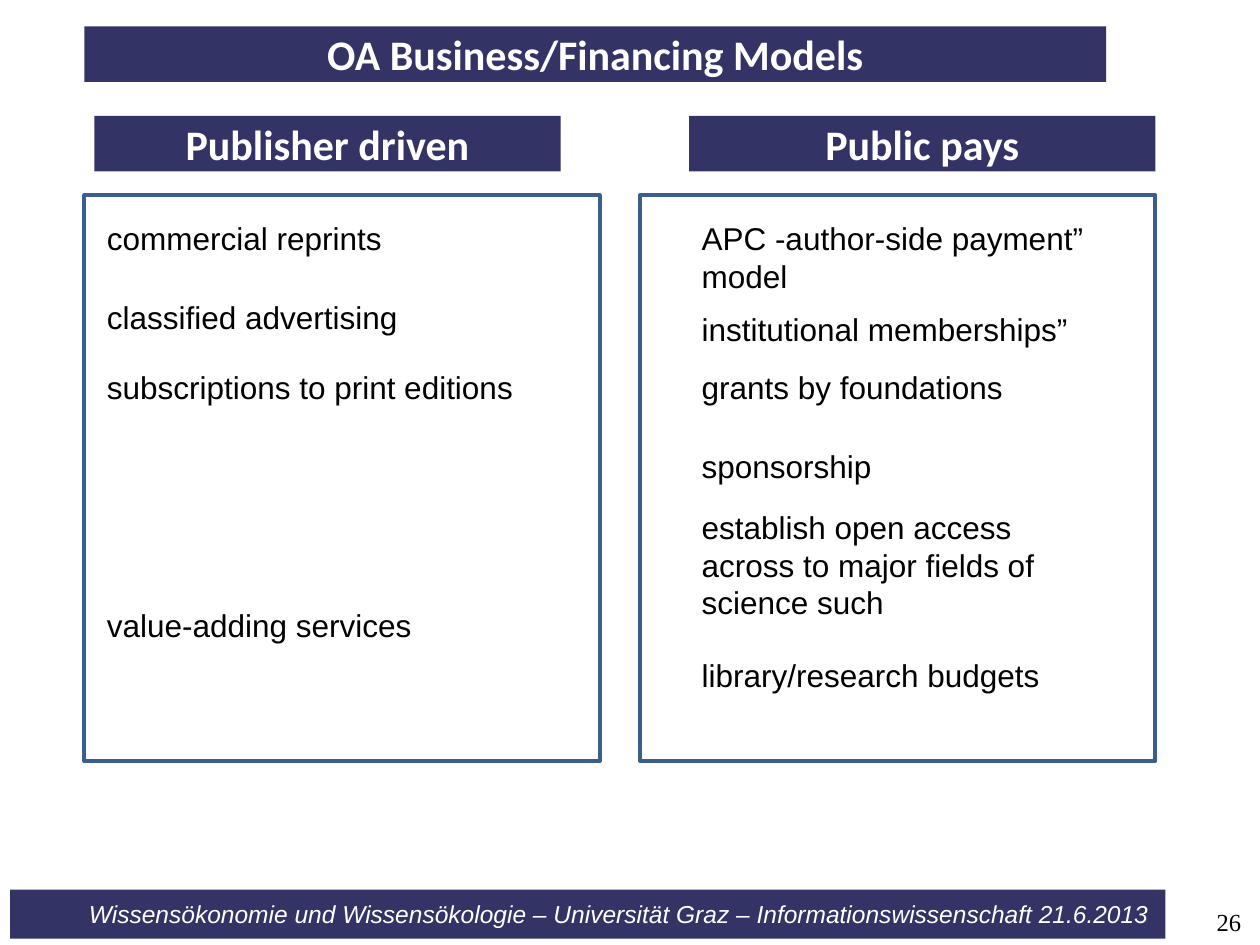
from dataclasses import dataclass

from pptx import Presentation
from pptx.dml.color import RGBColor
from pptx.enum.shapes import MSO_SHAPE as Shape
from pptx.enum.text import MSO_ANCHOR as Anchor, MSO_AUTO_SIZE as AutoSize, PP_ALIGN as Align
from pptx.util import Inches, Pt

NAVY = RGBColor(0x33, 0x33, 0x66)
BLUE = RGBColor(0x3A, 0x5F, 0x8C)
WHITE = RGBColor(0xFF, 0xFF, 0xFF)
BLACK = RGBColor(0, 0, 0)

HEADING = {"name": "Calibri", "size": Pt(24), "bold": True}
BODY = {"name": "Arial", "size": Pt(18)}
FOOTER = {"name": "Arial", "size": Pt(14), "italic": True}
NUMBER = {"name": "Times New Roman", "size": Pt(14)}

LINE_SHARE, PADDING_SHARE = 4.07, 1.33

prs = Presentation()
prs.slide_width, prs.slide_height = Inches(10), Inches(7.5)
slide = prs.slides.add_slide(prs.slide_layouts[6])


@dataclass(frozen=True)
class Box:
    """Position and size as percentages of the slide."""
    x: float
    y: float
    w: float
    h: float

    def emu(self) -> list[int]:
        sides = [prs.slide_width, prs.slide_height] * 2
        return [round(v * side / 100) for v, side in zip((self.x, self.y, self.w, self.h), sides)]


@dataclass(frozen=True)
class Item:
    text: str
    y: float
    w: float
    lines: int = 1


@dataclass(frozen=True)
class Column:
    title: str
    frame_x: float
    text_x: float
    items: tuple[Item, ...]


def write(tf, text: str, font: dict, color: RGBColor, align=Align.LEFT) -> None:
    p = tf.paragraphs[0]
    p.alignment = align
    r = p.add_run()
    r.text = text
    r.font.color.rgb = color
    for key, value in font.items():
        setattr(r.font, key, value)


def set_frame(tf, anchor, left: int = 0, bottom: int = 0) -> None:
    values = {"word_wrap": True, "vertical_anchor": anchor, "margin_left": left,
              "margin_top": 0, "margin_right": 0, "margin_bottom": bottom}
    for key, value in values.items():
        setattr(tf, key, value)


def add_rect(box: Box, fill: RGBColor):
    s = slide.shapes.add_shape(Shape.RECTANGLE, *box.emu())
    s.shadow.inherit = False
    s.fill.solid()
    s.fill.fore_color.rgb = fill
    s.line.fill.background()
    return s


def add_bar(box: Box, text: str, font: dict = HEADING, indent: int = 0) -> None:
    tf = add_rect(box, NAVY).text_frame
    set_frame(tf, Anchor.MIDDLE, left=indent)
    write(tf, text, font, WHITE, Align.CENTER)


def add_panel(x: float) -> None:
    s = add_rect(Box(x, 20.67, 40.9, 59.87), WHITE)
    s.line.color.rgb = BLUE
    s.line.width = Pt(2.25)


def add_item(item: Item, x: float) -> None:
    box = Box(x, item.y, item.w, item.lines * LINE_SHARE + PADDING_SHARE)
    tf = slide.shapes.add_textbox(*box.emu()).text_frame
    tf.word_wrap = True
    tf.auto_size = AutoSize.SHAPE_TO_FIT_TEXT
    write(tf, item.text, BODY, BLACK)


def add_column(column: Column) -> None:
    add_panel(column.frame_x)
    add_bar(Box(column.text_x, 12.27, 37, 5.87), column.title)
    for item in column.items:
        add_item(item, column.text_x)


def add_number(text: str) -> None:
    tf = slide.shapes.add_textbox(*Box(91.7, 93.07, 6.8, 6.93).emu()).text_frame
    set_frame(tf, Anchor.BOTTOM, bottom=Inches(0.07))
    write(tf, text, NUMBER, BLACK, Align.RIGHT)


COLUMNS = (
    Column("Publisher driven", 6.7, 7.5, (
        Item("commercial reprints", 22.53, 33.9),
        Item("classified advertising", 30.93, 33.9),
        Item("subscriptions to print editions", 38.27, 37),
        Item("value-adding services", 63.47, 37),
    )),
    Column("Public pays", 50.8, 54.7, (
        Item("APC -author-side payment” model", 22.53, 38.6, 2),
        Item("institutional memberships”", 32.13, 37),
        Item("grants by foundations", 38.27, 33.1),
        Item("sponsorship", 46.67, 33.9),
        Item("establish open access across to major fields of science such", 53.07, 33.9, 3),
        Item("library/research budgets", 68.8, 35.8),
    )),
)

add_bar(Box(0.8, 94.13, 91.7, 5.2),
        "Wissensökonomie und Wissensökologie – Universität Graz – Informationswissenschaft 21.6.2013",
        FOOTER, Inches(0.5))
add_bar(Box(6.7, 2.8, 81.1, 5.87), "OA Business/Financing Models")
for column in COLUMNS:
    add_column(column)
add_number("26")

prs.save("out.pptx")
